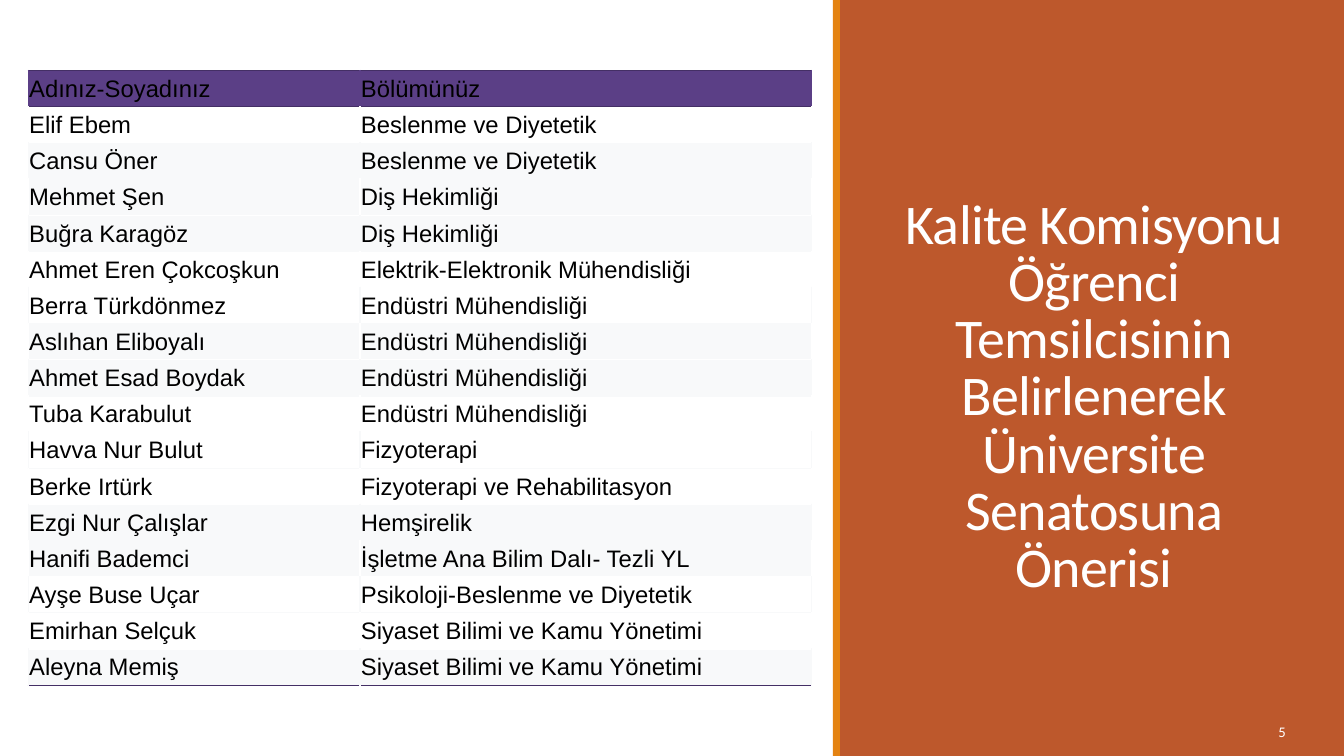
import pptx
import pptx.util
import pptx.dml.color
import pptx.enum.shapes
import pptx.enum.text
import pptx.oxml.ns
from lxml import etree

Inches = pptx.util.Inches
Pt = pptx.util.Pt
RGBColor = pptx.dml.color.RGBColor
Align = pptx.enum.text.PP_ALIGN
Anchor = pptx.enum.text.MSO_ANCHOR

WHITE = RGBColor(0xFF, 0xFF, 0xFF)
BLACK = RGBColor(0, 0, 0)
RUST = RGBColor(0xBD, 0x58, 0x2C)
ORANGE = RGBColor(0xE4, 0x83, 0x12)
PURPLE = RGBColor(0x5B, 0x3F, 0x86)
DARK_PURPLE = RGBColor(0x44, 0x2F, 0x65)
PALE = RGBColor(0xF8, 0xF9, 0xFA)

TITLE = ("Kalite Komisyonu Öğrenci Temsilcisinin Belirlenerek "
         "Üniversite Senatosuna Önerisi")
MEMBERS = [
    ("Adınız-Soyadınız", "Bölümünüz"),
    ("Elif Ebem", "Beslenme ve Diyetetik"),
    ("Cansu Öner", "Beslenme ve Diyetetik"),
    ("Mehmet Şen", "Diş Hekimliği"),
    ("Buğra Karagöz", "Diş Hekimliği"),
    ("Ahmet Eren Çokcoşkun", "Elektrik-Elektronik Mühendisliği"),
    ("Berra Türkdönmez", "Endüstri Mühendisliği"),
    ("Aslıhan Eliboyalı", "Endüstri Mühendisliği"),
    ("Ahmet Esad Boydak", "Endüstri Mühendisliği"),
    ("Tuba Karabulut", "Endüstri Mühendisliği"),
    ("Havva Nur Bulut", "Fizyoterapi"),
    ("Berke Irtürk", "Fizyoterapi ve Rehabilitasyon"),
    ("Ezgi Nur Çalışlar", "Hemşirelik"),
    ("Hanifi Bademci", "İşletme Ana Bilim Dalı- Tezli YL"),
    ("Ayşe Buse Uçar", "Psikoloji-Beslenme ve Diyetetik"),
    ("Emirhan Selçuk", "Siyaset Bilimi ve Kamu Yönetimi"),
    ("Aleyna Memiş", "Siyaset Bilimi ve Kamu Yönetimi"),
]
SHADED_ROWS = {2, 3, 4, 7, 8, 12, 13, 16}


def set_font(para, name, size, color):
    para.font.name = name
    para.font.size = Pt(size)
    para.font.color.rgb = color


def add_panel(page, left, width, color):
    panel = page.shapes.add_shape(
        pptx.enum.shapes.MSO_SHAPE.RECTANGLE,
        Inches(left), 0, Inches(width), Inches(7.5))
    panel.shadow.inherit = False
    panel.fill.solid()
    panel.fill.fore_color.rgb = color
    panel.line.fill.background()


def format_title(page):
    title = page.shapes.title
    title.left, title.top = Inches(8.85), Inches(0.7)
    title.width, title.height = Inches(4), Inches(5.29)
    frame = title.text_frame
    frame.text = TITLE
    frame.word_wrap = True
    frame.auto_size = pptx.enum.text.MSO_AUTO_SIZE.NONE
    frame.vertical_anchor = Anchor.BOTTOM
    para = frame.paragraphs[0]
    para.alignment = Align.CENTER
    para.line_spacing = 0.85
    set_font(para, "Calibri", 40, WHITE)
    para.runs[0].font._element.set("spc", "-50")
    # Bring the title in front of the panels
    page.shapes._spTree.append(title._element)


def add_page_number(page, number):
    box = page.shapes.add_textbox(
        Inches(12.06), Inches(7.06), Inches(0.79), Inches(0.4))
    frame = box.text_frame
    frame.text = number
    frame.word_wrap = True
    frame.vertical_anchor = Anchor.MIDDLE
    para = frame.paragraphs[0]
    para.alignment = Align.RIGHT
    para.space_after = Pt(6)
    set_font(para, "Calibri", 10.5, WHITE)


def row_borders(row):
    """Return the colours of the sides, top and bottom of a row."""
    if row == 0:
        return PURPLE, DARK_PURPLE, DARK_PURPLE
    sides, top = (WHITE, PALE) if row % 2 else (PALE, WHITE)
    bottom = sides
    if row == 1:
        top = DARK_PURPLE
    if row == len(MEMBERS) - 1:
        bottom = DARK_PURPLE
    return sides, top, bottom


def set_borders(cell, sides, top, bottom):
    properties = cell._tc.get_or_add_tcPr()
    qn = pptx.oxml.ns.qn
    for tag, color in (("lnL", sides), ("lnR", sides),
                       ("lnT", top), ("lnB", bottom)):
        line = etree.SubElement(properties, qn("a:" + tag), w=str(Pt(1)))
        fill = etree.SubElement(line, qn("a:solidFill"))
        etree.SubElement(fill, qn("a:srgbClr"), val=str(color))


def format_cell(cell, text, row):
    cell.text = text
    cell.vertical_anchor = Anchor.MIDDLE
    cell.margin_left = cell.margin_right = cell.margin_top = Inches(0.01)
    cell.margin_bottom = 0
    set_font(cell.text_frame.paragraphs[0], "Arial", 17, BLACK)
    set_borders(cell, *row_borders(row))
    if row == 0 or row in SHADED_ROWS:
        cell.fill.solid()
        cell.fill.fore_color.rgb = PALE if row else PURPLE
    else:
        cell.fill.background()


def add_member_table(page):
    table = page.shapes.add_table(
        len(MEMBERS), 2, Inches(0.28), Inches(0.7),
        Inches(7.78), Inches(6.1)).table
    table.first_row = table.horz_banding = False
    table.columns[0].width = Inches(3.29)
    table.columns[1].width = Inches(4.48)
    for row, member in enumerate(MEMBERS):
        for column, text in enumerate(member):
            format_cell(table.cell(row, column), text, row)


def main():
    deck = pptx.Presentation()
    deck.slide_width, deck.slide_height = Inches(13.33), Inches(7.5)
    page = deck.slides.add_slide(deck.slide_layouts.get_by_name("Title Only"))

    # Right-hand title panel with its accent strip
    add_panel(page, 8.33, 5, RUST)
    add_panel(page, 8.26, 0.07, ORANGE)
    format_title(page)
    add_page_number(page, "5")

    # Student representatives
    add_member_table(page)
    deck.save("out.pptx")


if __name__ == "__main__":
    main()
